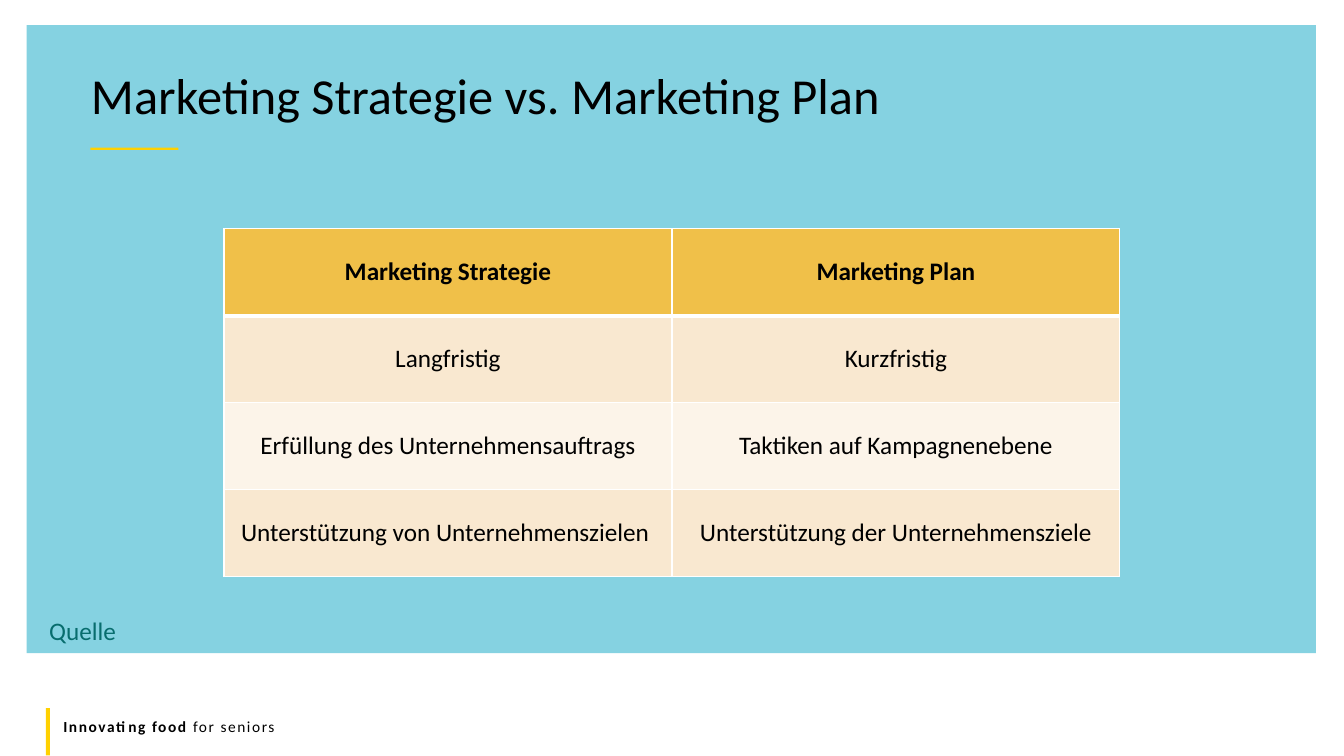
"""Build the slide comparing marketing strategy and marketing plan."""
from pptx import Presentation
from pptx import util as u
from pptx.dml import color
from pptx.enum import shapes, text
from pptx.oxml import parse_xml
from pptx.oxml import ns

Pt = u.Pt


def paint(fill, tone):
    fill.solid()
    fill.fore_color.rgb = color.RGBColor.from_string(tone)


def write(para, words, size, tone="000000", bold=False):
    run = para.add_run()
    run.text = words
    look = {"name": "Calibri", "size": Pt(size), "bold": bold}
    for key, value in look.items():
        setattr(run.font, key, value)
    paint(run.font.fill, tone)
    return run


deck = Presentation()
deck.slide_width, deck.slide_height = Pt(960), Pt(540)
slide = deck.slides.add_slide(deck.slide_layouts[5])

bars = [
    (19, 18, 921, 448.5, "85D2E1"),
    (64.5, 105.5, 63, 1.5, "FFD100"),
    (32.8, 505.8, 2.9, 33.8, "FFD100"),
]
for left, top, wide, high, tone in bars:
    bar = slide.shapes.add_shape(
        shapes.MSO_SHAPE.RECTANGLE, Pt(left), Pt(top), Pt(wide), Pt(high))
    bar.shadow.inherit = False
    paint(bar.fill, tone)
    bar.line.fill.background()

title = slide.shapes.title
title.element.getparent().append(title.element)
place = {"left": 65, "top": 48.2, "width": 851, "height": 46}
for key, value in place.items():
    setattr(title, key, Pt(value))
frame = title.text_frame
layout = {"margin_left": 0, "margin_right": 0, "word_wrap": True,
          "auto_size": text.MSO_AUTO_SIZE.NONE,
          "vertical_anchor": text.MSO_ANCHOR.MIDDLE}
for key, value in layout.items():
    setattr(frame, key, value)
head = frame.paragraphs[0]
head.alignment = text.PP_ALIGN.LEFT
head.line_spacing = 0.8
write(head, "Marketing Strategie vs. Marketing Plan", 36)

rows = [
    ("Marketing Strategie", "Marketing Plan"),
    ("Langfristig", "Kurzfristig"),
    ("Erfüllung des Unternehmensauftrags", "Taktiken auf Kampagnenebene"),
    ("Unterstützung von Unternehmenszielen ",
     "Unterstützung der Unternehmensziele"),
]
fills = ["F0C049", "F9E8D0", "FCF4E9", "F9E8D0"]
table = slide.shapes.add_table(
    4, 2, Pt(160), Pt(163.4), Pt(640), Pt(248.4)).table
for r, row in enumerate(rows):
    table.rows[r].height = Pt(62.1)
    for c, words in enumerate(row):
        cell = table.cell(r, c)
        cell.vertical_anchor = text.MSO_ANCHOR.MIDDLE
        para = cell.text_frame.paragraphs[0]
        para.alignment = text.PP_ALIGN.CENTER
        write(para, words, 18, bold=r == 0)
        props = cell._tc.get_or_add_tcPr()
        for side in "LRTB":
            thick = 3 if (r, side) in [(0, "B"), (1, "T")] else 1
            props.append(parse_xml(
                f'<a:ln{side} {ns.nsdecls("a")} w="{Pt(thick)}"><a:solidFill>'
                f'<a:srgbClr val="FFFFFF"/></a:solidFill></a:ln{side}>'))
        paint(cell.fill, fills[r])

labels = [
    (28, 436.3, 101.5, 29, 18, 0, [("Quelle", "086D6E", False)]),
    (38.2, 509, 864, 21, 11, 110,
     [("Innovating food ", "000000", True),
      ("for seniors", "000000", False)]),
]
for left, top, wide, high, size, gap, parts in labels:
    box = slide.shapes.add_textbox(Pt(left), Pt(top), Pt(wide), Pt(high))
    box.text_frame.word_wrap = True
    for words, tone, bold in parts:
        run = write(box.text_frame.paragraphs[0], words, size, tone, bold)
        run._r.get_or_add_rPr().set("spc", str(gap))

deck.save("out.pptx")
